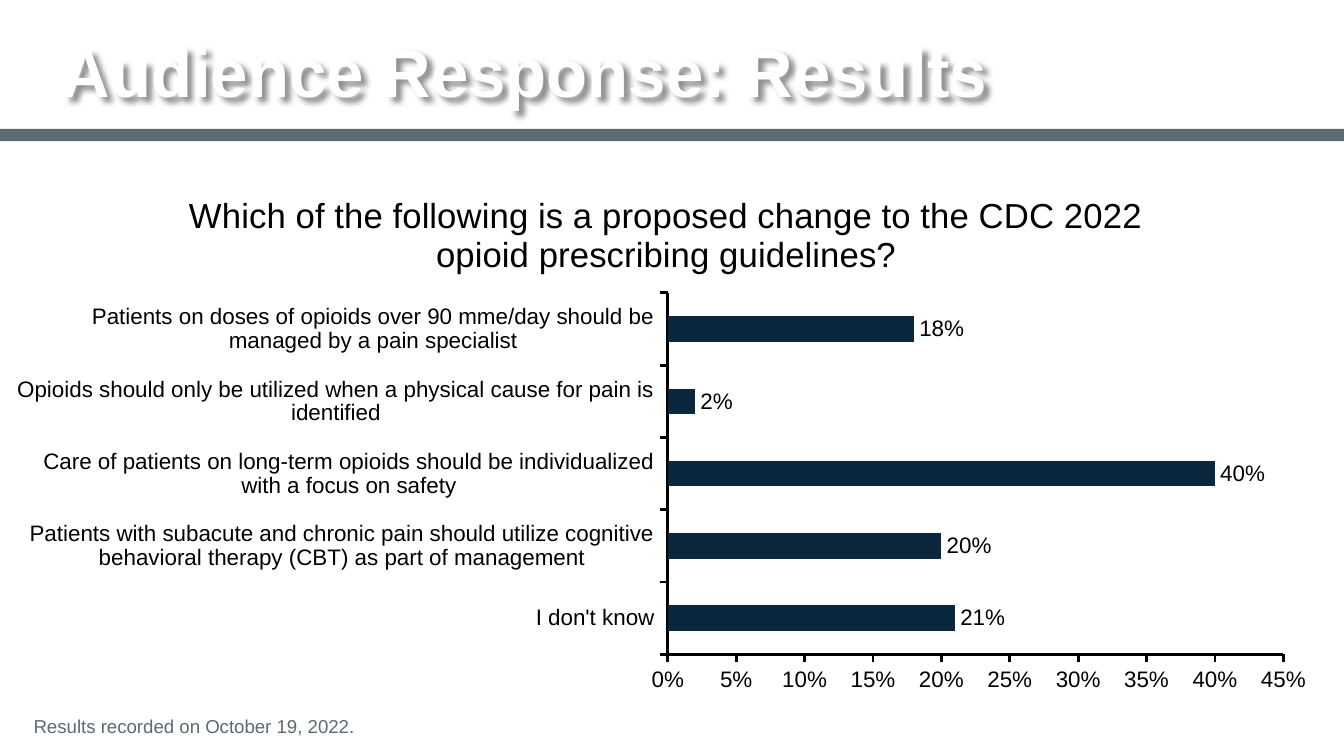
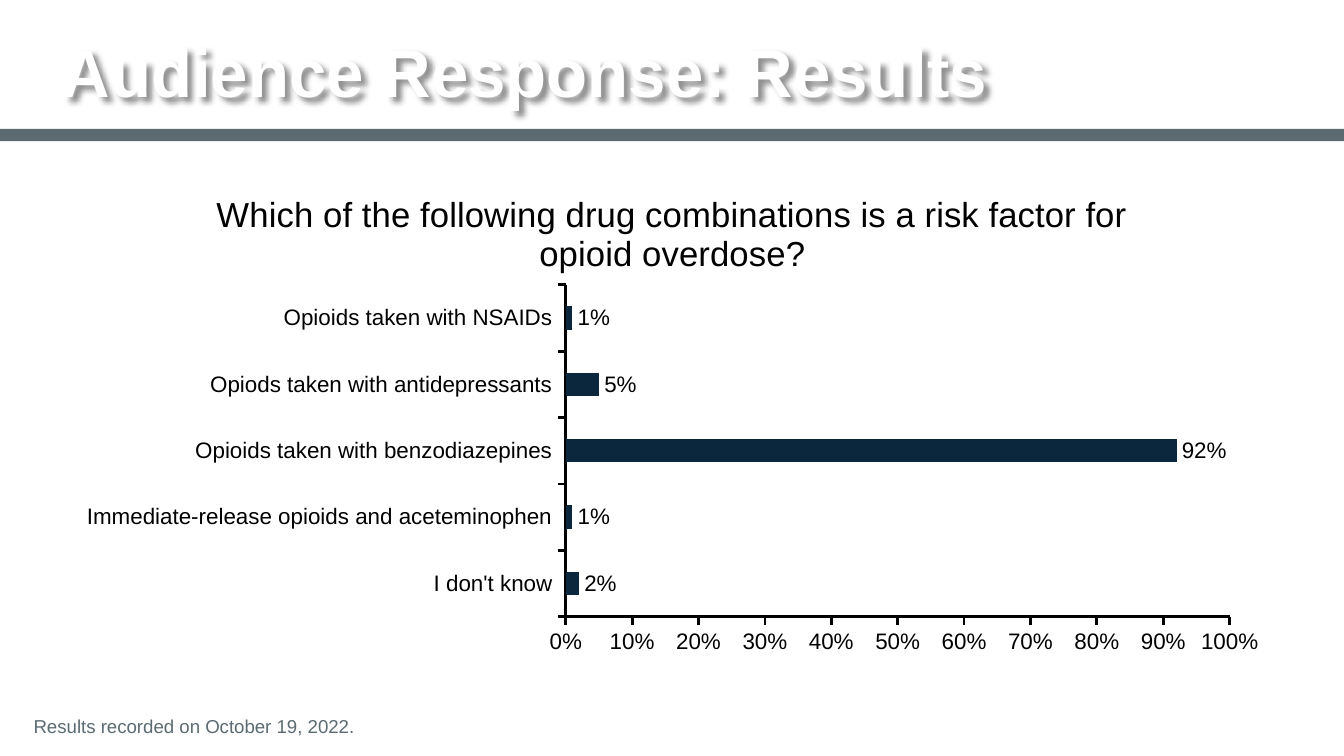
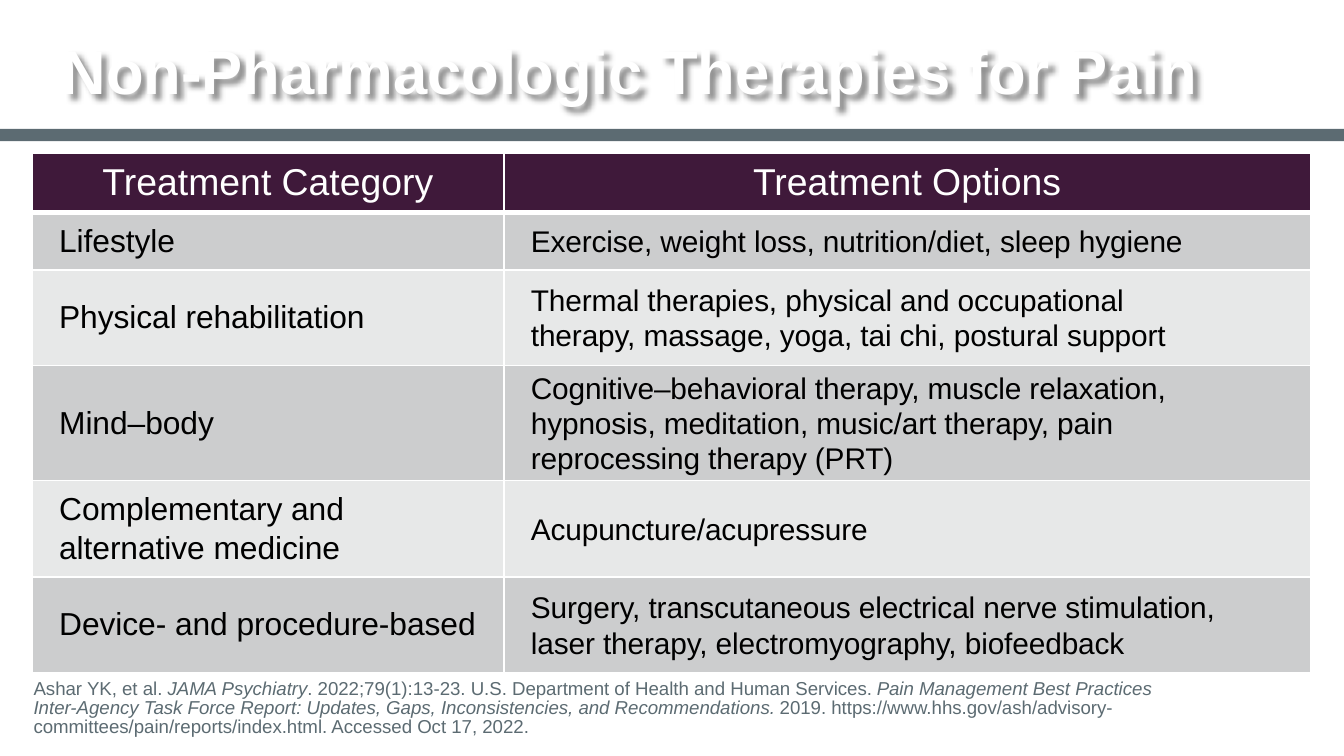
from dataclasses import dataclass

from lxml.etree import SubElement
from pptx import Presentation
from pptx.chart.data import CategoryChartData
from pptx.dml.color import RGBColor
from pptx.enum.chart import XL_CHART_TYPE, XL_LABEL_POSITION, XL_TICK_MARK
from pptx.enum.shapes import MSO_SHAPE
from pptx.enum.text import MSO_ANCHOR, MSO_AUTO_SIZE, PP_ALIGN
from pptx.oxml import parse_xml
from pptx.oxml.ns import nsdecls, qn
from pptx.util import Pt

PX = 9144  # 100 px to the inch
WIDTH = 1000 * PX
HEIGHT = WIDTH * 9 // 16
FONT = "Arial"
WHITE, BLACK, SLATE, NAVY = "FFFFFF", "000000", "5C6B72", "0B273E"
PLUM, DARK, LIGHT = "3F193A", "CCCDCE", "E7E8E8"


@dataclass(frozen=True)
class Box:
    left: int
    top: int
    width: int
    height: int

    def emu(self) -> tuple[int, ...]:
        return tuple(n * PX for n in (self.left, self.top, self.width, self.height))


@dataclass(frozen=True)
class Poll:
    """A question; the plot box is measured from the chart's corner."""
    ask: str
    box: Box
    plot: Box
    top: float
    step: float
    votes: dict[str, float]


@dataclass(frozen=True)
class Row:
    kind: list[str]
    options: str
    height: int


RESULTS = "Audience Response: Results"
DATED = [("Results recorded on October 19, 2022.", False)]
POLLS = [
    Poll(
        "Which of the following is a proposed change to the CDC 2022 opioid prescribing guidelines?",
        Box(11, 125, 970, 395), Box(486, 93, 458, 269), 0.45, 0.05,
        {
            "I don't know": 0.21,
            "Patients with subacute and chronic pain should utilize cognitive "
            "behavioral therapy (CBT) as part of management": 0.2,
            "Care of patients on long-term opioids should be individualized with a focus on safety": 0.4,
            "Opioids should only be utilized when a physical cause for pain is identified": 0.02,
            "Patients on doses of opioids over 90 mme/day should be managed by a pain specialist": 0.18,
        },
    ),
    Poll(
        "Which of the following drug combinations is a risk factor for opioid overdose?",
        Box(46, 125, 909, 370), Box(375, 87, 494, 247), 1, 0.1,
        {
            "I don't know": 0.02,
            "Immediate-release opioids and aceteminophen": 0.01,
            "Opioids taken with benzodiazepines": 0.92,
            "Opiods taken with antidepressants": 0.05,
            "Opioids taken with NSAIDs": 0.01,
        },
    ),
]
HEADS = ["Treatment Category", "Treatment Options"]
ROWS = [
    Row(["Lifestyle"], "Exercise, weight loss, nutrition/diet, sleep hygiene", 43),
    Row(["Physical rehabilitation"],
        "Thermal therapies, physical and occupational therapy, massage, yoga, tai chi, postural support", 71),
    Row(["Mind–body"],
        "Cognitive–behavioral therapy, muscle relaxation, hypnosis, meditation, "
        "music/art therapy, pain reprocessing therapy (PRT)", 85),
    Row(["Complementary and", "alternative medicine"], "Acupuncture/acupressure", 72),
    Row(["Device- and procedure-based"],
        "Surgery, transcutaneous electrical nerve stimulation, laser therapy, electromyography, biofeedback", 71),
]
CITED = [
    ("Ashar YK, et al. ", False),
    ("JAMA Psychiatry", True),
    (". 2022;79(1):13-23. U.S. Department of Health and Human Services. ", False),
    ("Pain Management Best Practices Inter-Agency Task Force Report: "
     "Updates, Gaps, Inconsistencies, and Recommendations.", True),
    (" 2019. https://www.hhs.gov/ash/advisory-committees/pain/reports/index.html. Accessed Oct 17, 2022.", False),
]


def rgb(code: str) -> RGBColor:
    return RGBColor.from_string(code)


def put(target, values: dict) -> None:
    """Set each named attribute on the target."""
    for name, value in values.items():
        setattr(target, name, value)


def style(font, size: float, color: str, **extra) -> None:
    put(font, {"name": FONT, "size": Pt(size), "bold": False, **extra})
    font.color.rgb = rgb(color)


def frame(text, anchor, left: int, top: int, bottom: int) -> None:
    put(text, {
        "word_wrap": True, "auto_size": MSO_AUTO_SIZE.SHAPE_TO_FIT_TEXT, "vertical_anchor": anchor,
        "margin_left": left * PX, "margin_right": 0, "margin_top": top * PX, "margin_bottom": bottom * PX,
    })


def start(deck, words: str, size: int, box: Box):
    """Add a slide with its band and shadowed title."""
    slide = deck.slides.add_slide(deck.slide_layouts[5])
    band = slide.shapes.add_shape(MSO_SHAPE.RECTANGLE, *Box(0, 96, 1000, 9).emu())
    band.shadow.inherit = False
    band.fill.solid()
    band.fill.fore_color.rgb = rgb(SLATE)
    band.line.fill.background()

    title = slide.shapes.title
    put(title, dict(zip(("left", "top", "width", "height"), box.emu())))
    frame(title.text_frame, MSO_ANCHOR.MIDDLE, 0, 5, 5)
    title.text_frame.text = words
    line = title.text_frame.paragraphs[0]
    put(line, {"alignment": PP_ALIGN.LEFT, "line_spacing": 0.85})
    style(line.runs[0].font, size, WHITE, bold=True)
    title.element.spPr.append(parse_xml(
        f'<a:effectLst {nsdecls("a")}><a:outerShdw blurRad="38100" dist="38100" dir="2700000" '
        'algn="tl" rotWithShape="0"><a:srgbClr val="000000"><a:alpha val="43000"/></a:srgbClr>'
        "</a:outerShdw></a:effectLst>"))
    return slide


def footnote(slide, parts: list[tuple[str, bool]], box: Box) -> None:
    text = slide.shapes.add_textbox(*box.emu()).text_frame
    frame(text, MSO_ANCHOR.BOTTOM, 25, 0, 13)
    line = text.paragraphs[0]
    line.line_spacing = 0.85
    for words, slant in parts:
        run = line.add_run()
        run.text = words
        style(run.font, 10, SLATE, italic=slant)


def place(chart, box: Box, plot: Box) -> None:
    """Fix the inner plot area as fractions of the chart."""
    area = chart.element.find(".//" + qn("c:plotArea"))
    for old in area.findall(qn("c:layout")):
        area.remove(old)
    tags = [("layoutTarget", "inner"), ("xMode", "edge"), ("yMode", "edge"),
            ("x", plot.left / box.width), ("y", plot.top / box.height),
            ("w", plot.width / box.width), ("h", plot.height / box.height)]
    body = "".join(f'<c:{tag} val="{value}"/>' for tag, value in tags)
    area.insert(0, parse_xml(
        f'<c:layout {nsdecls("c")}><c:manualLayout>{body}</c:manualLayout></c:layout>'))


def graph(slide, poll: Poll) -> None:
    data = CategoryChartData(number_format="0%")
    data.categories = list(poll.votes)
    data.add_series("Series 1", list(poll.votes.values()))
    chart = slide.shapes.add_chart(XL_CHART_TYPE.BAR_CLUSTERED, *poll.box.emu(), data).chart
    style(chart.font, 10, BLACK)
    put(chart, {"has_legend": False, "has_title": True})
    head = chart.chart_title.text_frame
    head.text = poll.ask
    style(head.paragraphs[0].runs[0].font, 18.6, BLACK)

    for axis in (chart.category_axis, chart.value_axis):
        put(axis, {"has_major_gridlines": False, "major_tick_mark": XL_TICK_MARK.OUTSIDE,
                   "minor_tick_mark": XL_TICK_MARK.NONE})
        style(axis.tick_labels.font, 12, BLACK)
        axis.format.line.width = Pt(1.5)
        axis.format.line.color.rgb = rgb(BLACK)
    put(chart.value_axis, {"minimum_scale": 0, "maximum_scale": poll.top, "major_unit": poll.step})
    percent = {"number_format": "0%", "number_format_is_linked": False}
    put(chart.value_axis.tick_labels, percent)

    plot = chart.plots[0]
    put(plot, {"gap_width": 182, "vary_by_categories": False, "has_data_labels": True})
    put(plot.data_labels, {**percent, "show_value": True, "position": XL_LABEL_POSITION.OUTSIDE_END})
    style(plot.data_labels.font, 12, BLACK)
    bars = plot.series[0].format.fill
    bars.solid()
    bars.fore_color.rgb = rgb(NAVY)
    place(chart, poll.box, poll.plot)


def edge(cell, top: int, bottom: int) -> None:
    """Give the cell white borders, in points."""
    props = cell._tc.get_or_add_tcPr()
    for side, width in {"L": 1, "R": 1, "T": top, "B": bottom}.items():
        line = SubElement(props, qn(f"a:ln{side}"), w=str(int(Pt(width))))
        fill = SubElement(line, qn("a:solidFill"))
        SubElement(fill, qn("a:srgbClr"), val=WHITE)


def write(cell, lines: list[str], size: int, color: str, fill: str, left: int = 0, right: int = 0,
          align=PP_ALIGN.LEFT, space: float = 1.0, track: int = 0) -> None:
    cell.fill.solid()
    cell.fill.fore_color.rgb = rgb(fill)
    put(cell, {"vertical_anchor": MSO_ANCHOR.MIDDLE, "margin_left": left * PX,
               "margin_right": right * PX, "margin_top": 0, "margin_bottom": 0})
    cell.text = "\n".join(lines)
    for index, line in enumerate(cell.text_frame.paragraphs):
        put(line, {"alignment": align, "line_spacing": space})
        if index:
            line.space_before = Pt(1.6)
        run = line.runs[0]
        style(run.font, size, color)
        run.font._element.set("spc", str(track))


def grid(slide) -> None:
    """Draw the table of therapies."""
    table = slide.shapes.add_table(len(ROWS) + 1, 2, *Box(24, 114, 951, 386).emu()).table
    for column, width in zip(table.columns, (351, 600)):
        column.width = width * PX
    for line, height in zip(table.rows, [44] + [row.height for row in ROWS]):
        line.height = height * PX
    for col, head in enumerate(HEADS):
        cell = table.cell(0, col)
        edge(cell, 1, 3)
        write(cell, [head], 20, WHITE, PLUM, align=PP_ALIGN.CENTER)
    for at, row in enumerate(ROWS, 1):
        fill = DARK if at % 2 else LIGHT
        kind, options = table.cell(at, 0), table.cell(at, 1)
        for cell in (kind, options):
            edge(cell, 3 if at == 1 else 1, 1)
        write(kind, row.kind, 17, BLACK, fill, 20, 10, track=-5)
        write(options, [row.options], 16, BLACK, fill, 20, 60, space=1.07, track=-5)


def main() -> None:
    deck = Presentation()
    put(deck, {"slide_width": WIDTH, "slide_height": HEIGHT})
    for poll in POLLS:
        slide = start(deck, RESULTS, 36, Box(46, 26, 909, 62))
        graph(slide, poll)
        footnote(slide, DATED, Box(0, 535, 881, 27))
    slide = start(deck, "Non-Pharmacologic Therapies for Pain", 33, Box(46, 28, 909, 57))
    footnote(slide, CITED, Box(0, 506, 881, 56))
    grid(slide)
    deck.save("out.pptx")


if __name__ == "__main__":
    main()
